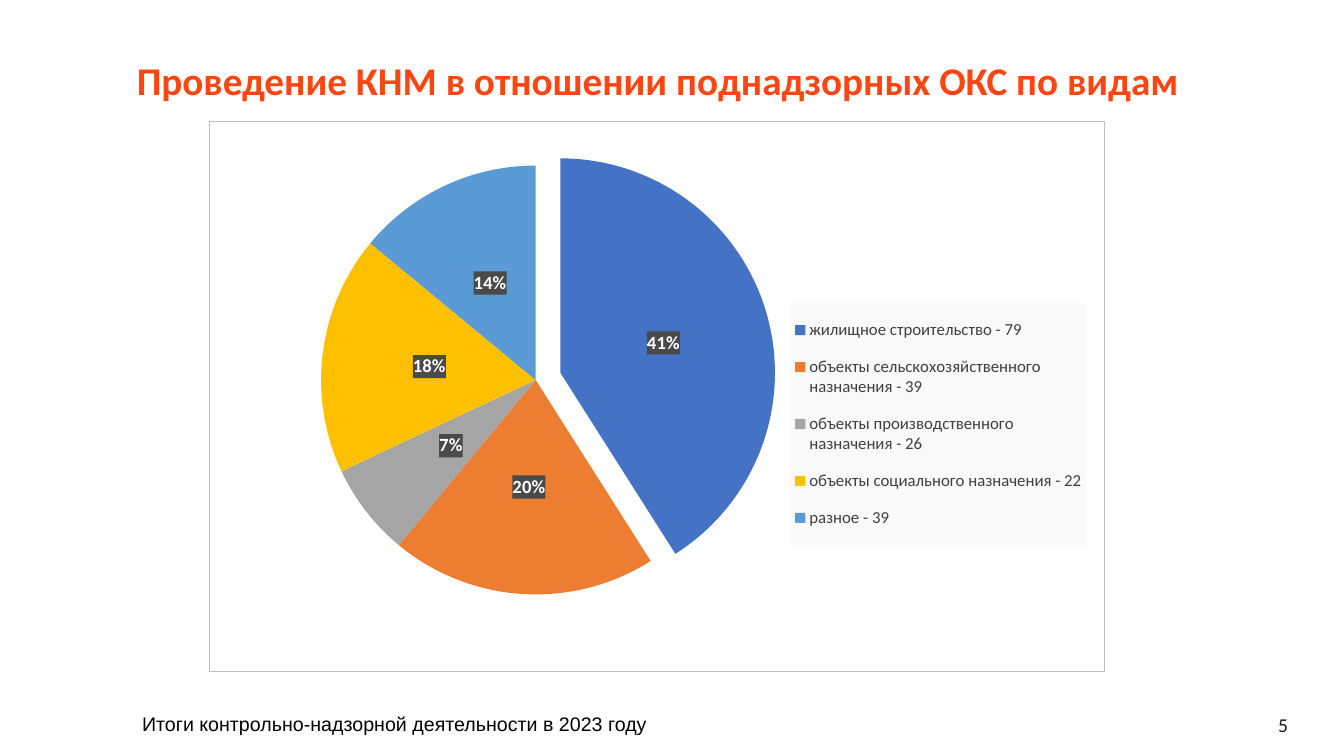
from lxml import etree
from pptx import Presentation
from pptx import util as u
from pptx.chart import data as chart_data
from pptx.dml import color
from pptx.enum import chart as charts, text
from pptx.oxml import ns

TITLE = "Проведение КНМ в отношении поднадзорных ОКС по видам"
FOOTER = "Итоги контрольно-надзорной деятельности в 2023 году"
OBJECT_KINDS = [
    ("жилищное строительство - 79", 41, "4472C4"),
    ("объекты сельскохозяйственного назначения - 39", 20, "ED7D31"),
    ("объекты производственного назначения - 26", 7, "A5A5A5"),
    ("объекты социального назначения - 22", 18, "FFC000"),
    ("разное - 39", 14, "5B9BD5"),
]


def rgb(value):
    """Return the colour for a hex string."""
    return color.RGBColor.from_string(value)


def set_values(target, values):
    """Set every attribute named in a dict."""
    for name, value in values.items():
        setattr(target, name, value)


def set_font(font, size, hex_color, name="Calibri", bold=False):
    """Format a font."""
    set_values(font, {"size": u.Pt(size), "name": name, "bold": bold})
    font.color.rgb = rgb(hex_color)


def place(shape, left, top, width, height):
    """Move and size a shape, in points."""
    values = zip(("left", "top", "width", "height"), (left, top, width, height))
    set_values(shape, {name: u.Pt(value) for name, value in values})


def write(shape, words, align, anchor, **font):
    """Write one formatted paragraph into a shape."""
    frame = shape.text_frame
    set_values(frame, {"word_wrap": True, "vertical_anchor": anchor})
    para = frame.paragraphs[0]
    para.alignment = align
    span = para.add_run()
    span.text = words
    set_font(span.font, **font)
    return para


def add_label(page, words, area, align, **font):
    """Add a text box without margins."""
    box = page.shapes.add_textbox(*(u.Pt(value) for value in area))
    sides = ("left", "top", "right", "bottom")
    set_values(box.text_frame, {f"margin_{side}": 0 for side in sides})
    write(box, words, align, text.MSO_ANCHOR.MIDDLE, **font)


def chart_node(tag, **attributes):
    """Make an element of the chart namespace."""
    node = etree.Element(ns.qn(f"c:{tag}"))
    for name, value in attributes.items():
        node.set(name, str(value))
    return node


def chart_fill(hex_color, line=None):
    """Make chart shape properties with a solid fill and an optional line."""
    properties = chart_node("spPr")
    parents = [properties]
    if line:
        parents.append(etree.SubElement(properties, ns.qn("a:ln"), w=str(u.Pt(0.75))))
    for parent, value in zip(parents, (hex_color, line)):
        fill = etree.Element(ns.qn("a:solidFill"))
        etree.SubElement(fill, ns.qn("a:srgbClr"), val=value)
        parent.insert(0, fill)
    return properties


def set_layout(parent, index, area, inner=False):
    """Give a chart part a manual place, in fractions of the chart."""
    for old in parent.findall(ns.qn("c:layout")):
        parent.remove(old)
    layout, manual = chart_node("layout"), chart_node("manualLayout")
    layout.append(manual)
    if inner:
        manual.append(chart_node("layoutTarget", val="inner"))
    for tag in ("xMode", "yMode"):
        manual.append(chart_node(tag, val="edge"))
    for tag, value in zip("xywh", area):
        manual.append(chart_node(tag, val=value))
    parent.insert(index, layout)


def format_slices(series):
    """Colour the slices and pull out the first one."""
    for index, (_, _, hex_color) in enumerate(OBJECT_KINDS):
        fill = series.points[index].format.fill
        fill.solid()
        fill.fore_color.rgb = rgb(hex_color)
    first = series._element.find(ns.qn("c:dPt"))
    first.find(ns.qn("c:spPr")).addprevious(chart_node("explosion", val=12))


def format_labels(plot):
    """Show percentages on dark labels."""
    plot.has_data_labels = True
    labels = plot.data_labels
    set_values(labels, {
        "show_percentage": True, "show_value": False,
        "number_format": "0%", "number_format_is_linked": False,
        "position": charts.XL_LABEL_POSITION.CENTER,
    })
    set_font(labels.font, 13.3, "FFFFFF", bold=True)
    labels._element.find(ns.qn("c:txPr")).addprevious(chart_fill("4A4A4A"))


def format_legend(chart):
    """Place the legend on a pale panel at the right."""
    chart.has_legend = True
    legend = chart.legend
    set_values(legend, {
        "position": charts.XL_LEGEND_POSITION.RIGHT, "include_in_layout": False,
    })
    set_font(legend.font, 12, "404040")
    node = legend._element
    set_layout(node, 1, (0.65, 0.33, 0.33, 0.44))
    node.find(ns.qn("c:txPr")).addprevious(chart_fill("F9F9F9"))


def add_pie(page, area):
    """Add the pie of inspections by kind of object."""
    data = chart_data.CategoryChartData()
    data.categories = [name for name, _, _ in OBJECT_KINDS]
    data.add_series("Series 1", [value for _, value, _ in OBJECT_KINDS])
    points = (u.Pt(value) for value in area)
    chart = page.shapes.add_chart(charts.XL_CHART_TYPE.PIE, *points, data).chart
    chart.has_title = False
    set_font(chart.font, 10, "000000")
    plot = chart.plots[0]
    plot.vary_by_categories = True
    format_slices(plot.series[0])
    format_labels(plot)
    format_legend(chart)
    space = chart._chartSpace
    plot_area = space.find(".//" + ns.qn("c:plotArea"))
    set_layout(plot_area, 0, (0.11, 0.08, 0.51, 0.78), inner=True)
    space.find(ns.qn("c:txPr")).addprevious(chart_fill("FFFFFF", "BFBFBF"))


def main():
    """Build the slide and save it."""
    deck = Presentation()
    set_values(deck, {"slide_width": u.Pt(960), "slide_height": u.Pt(540)})
    page = deck.slides.add_slide(deck.slide_layouts[5])
    title = page.shapes.title
    place(title, 42, 31.5, 855, 55)
    para = write(title, TITLE, text.PP_ALIGN.CENTER, text.MSO_ANCHOR.MIDDLE,
                 size=28, hex_color="FF4612", bold=True)
    para.line_spacing = 0.9
    add_pie(page, (149, 86.5, 640, 393.5))
    add_label(page, FOOTER, (101.5, 508.5, 780, 17), text.PP_ALIGN.LEFT,
              size=14, hex_color="000000", name="Arial")
    add_label(page, "5", (902, 509, 18, 17), text.PP_ALIGN.RIGHT,
              size=14, hex_color="1A1A1A")
    deck.save("out.pptx")


if __name__ == "__main__":
    main()
